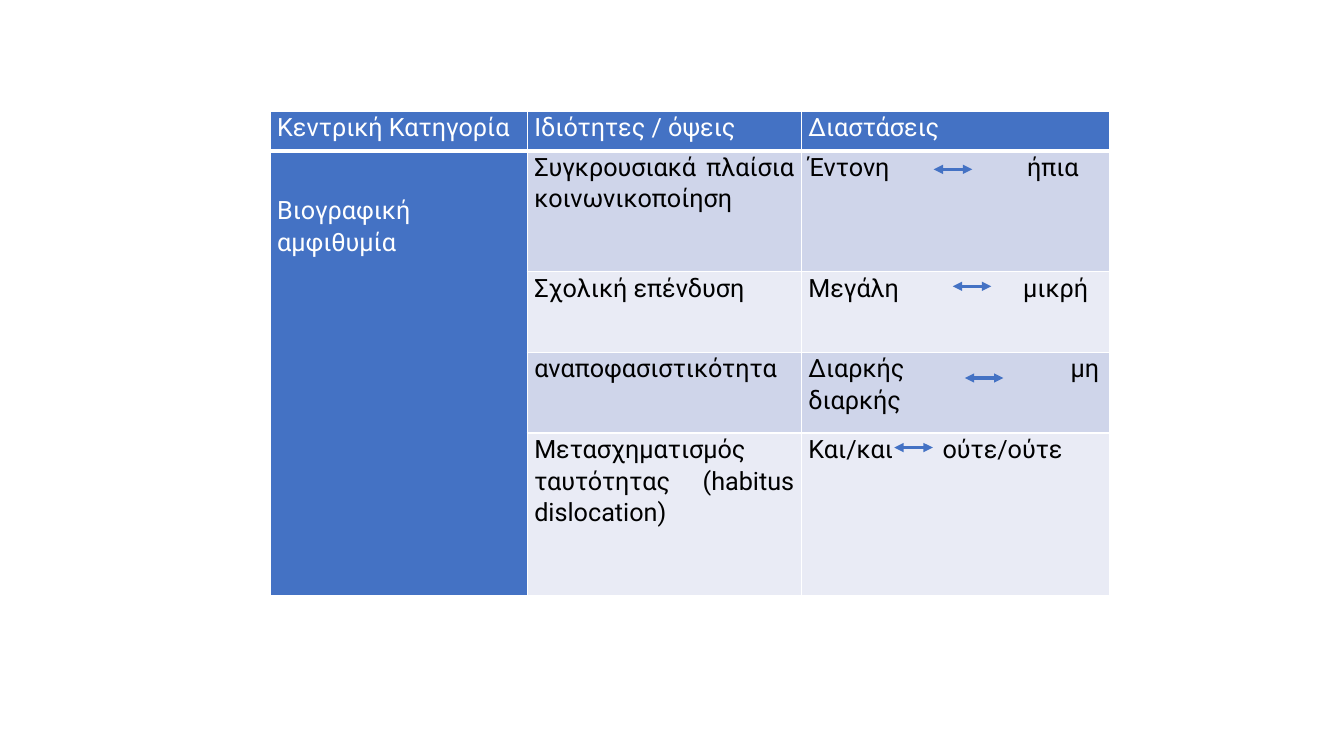
from typing import NamedTuple

from lxml.etree import SubElement
from pptx import Presentation
from pptx.dml.color import RGBColor
from pptx.enum.shapes import MSO_CONNECTOR
from pptx.enum.text import PP_ALIGN
from pptx.oxml import parse_xml
from pptx.oxml.ns import nsdecls, qn
from pptx.slide import Slide
from pptx.table import _Cell
from pptx.util import Inches, Pt

COLORS = {
    "accent": "4472C4",
    "odd": "CFD5EA",
    "even": "E9EBF5",
    "white": "FFFFFF",
    "black": "000000",
}
FONT = "Roboto"
SLIDE_W, SLIDE_H = Inches(13.33), Inches(7.5)
LEFT, TOP = 20.1, 14.75
COLUMNS = (19.13, 20.4, 22.9)
HEADER_H = 5.2
ARROW_W = 2.87
HEADERS = ("Κεντρική Κατηγορία", "Ιδιότητες / όψεις", "Διαστάσεις")
CATEGORY = "Βιογραφική αμφιθυμία"


class Dimension(NamedTuple):
    aspect: str
    low: str
    high: str
    tab: float
    height: float
    arrow_x: float
    arrow_y: float


DIMENSIONS = (
    Dimension("Συγκρουσιακά πλαίσια κοινωνικοποίηση", "Έντονη", "ήπια", 2.17, 16, 69.47, 22.4),
    Dimension("Σχολική επένδυση", "Μεγάλη", "μικρή", 2.13, 10.67, 70.89, 37.87),
    Dimension("αναποφασιστικότητα", "Διαρκής", "μη διαρκής", 2.6, 10.67, 71.79, 50),
    Dimension("Μετασχηματισμός ταυτότητας (habitus dislocation)", "Και/και", "ούτε/ούτε",
              1.33, 21.47, 66.54, 59.2),
)


def across(percent: float) -> int:
    return round(SLIDE_W * percent / 100)


def down(percent: float) -> int:
    return round(SLIDE_H * percent / 100)


def rgb(name: str) -> RGBColor:
    return RGBColor.from_string(COLORS[name])


def style_cell(cell: _Cell, fill: str, top: float = 1, bottom: float = 1) -> None:
    cell.fill.solid()
    cell.fill.fore_color.rgb = rgb(fill)
    borders = (("lnL", 1), ("lnR", 1), ("lnT", top), ("lnB", bottom))
    for i, (side, width) in enumerate(borders):
        line = parse_xml(
            f'<a:{side} {nsdecls("a")} w="{Pt(width)}"><a:solidFill>'
            f'<a:srgbClr val="{COLORS["white"]}"/></a:solidFill></a:{side}>'
        )
        cell._tc.get_or_add_tcPr().insert(i, line)


def write_cell(cell: _Cell, text: str, color: str, tab: float = 1.01) -> None:
    cell.margin_left = cell.margin_right = Inches(0.07)
    cell.margin_top = cell.margin_bottom = 0
    p = cell.text_frame.paragraphs[0]
    p.text = text
    p.alignment = PP_ALIGN.JUSTIFY
    p.line_spacing = 1.07
    p.space_after = Pt(8)
    tabs = SubElement(p._p.get_or_add_pPr(), qn("a:tabLst"))
    SubElement(tabs, qn("a:tab"), pos=str(Inches(tab)), algn="l")
    p.font.name = FONT
    p.font.size = Pt(18)
    p.font.color.rgb = rgb(color)


def add_category_table(s: Slide) -> None:
    heights = [HEADER_H] + [d.height for d in DIMENSIONS]
    table = s.shapes.add_table(
        len(heights), len(COLUMNS), across(LEFT), down(TOP),
        across(sum(COLUMNS)), down(sum(heights)),
    ).table
    for column, width in zip(table.columns, COLUMNS):
        column.width = across(width)
    for row, height in zip(table.rows, heights):
        row.height = down(height)

    for c, header in enumerate(HEADERS):
        style_cell(table.cell(0, c), "accent", bottom=3)
        write_cell(table.cell(0, c), header, "white")

    for r, d in enumerate(DIMENSIONS, start=1):
        band = "odd" if r % 2 else "even"
        for c, fill in enumerate(("accent", band, band)):
            style_cell(table.cell(r, c), fill, top=3 if r == 1 else 1)
        write_cell(table.cell(r, 1), d.aspect, "black")
        write_cell(table.cell(r, 2), f"{d.low}\t{d.high}", "black", d.tab)

    category = table.cell(1, 0)
    category.merge(table.cell(len(DIMENSIONS), 0))
    write_cell(category, CATEGORY, "white")
    category.margin_top = Inches(0.43)


def add_arrow(s: Slide, x: float, y: float) -> None:
    arrow = s.shapes.add_connector(
        MSO_CONNECTOR.STRAIGHT, across(x), down(y), across(x + ARROW_W), down(y)
    )
    arrow.line.color.rgb = rgb("accent")
    arrow.line.width = Pt(2.25)
    ln = arrow.line._get_or_add_ln()
    for end in ("a:headEnd", "a:tailEnd"):
        SubElement(ln, qn(end), type="triangle")
    SubElement(arrow._element.spPr, qn("a:effectLst"))


def main() -> None:
    prs = Presentation()
    prs.slide_width, prs.slide_height = SLIDE_W, SLIDE_H
    s = prs.slides.add_slide(prs.slide_layouts[6])
    add_category_table(s)
    for d in DIMENSIONS:
        add_arrow(s, d.arrow_x, d.arrow_y)
    prs.save("out.pptx")


if __name__ == "__main__":
    main()
